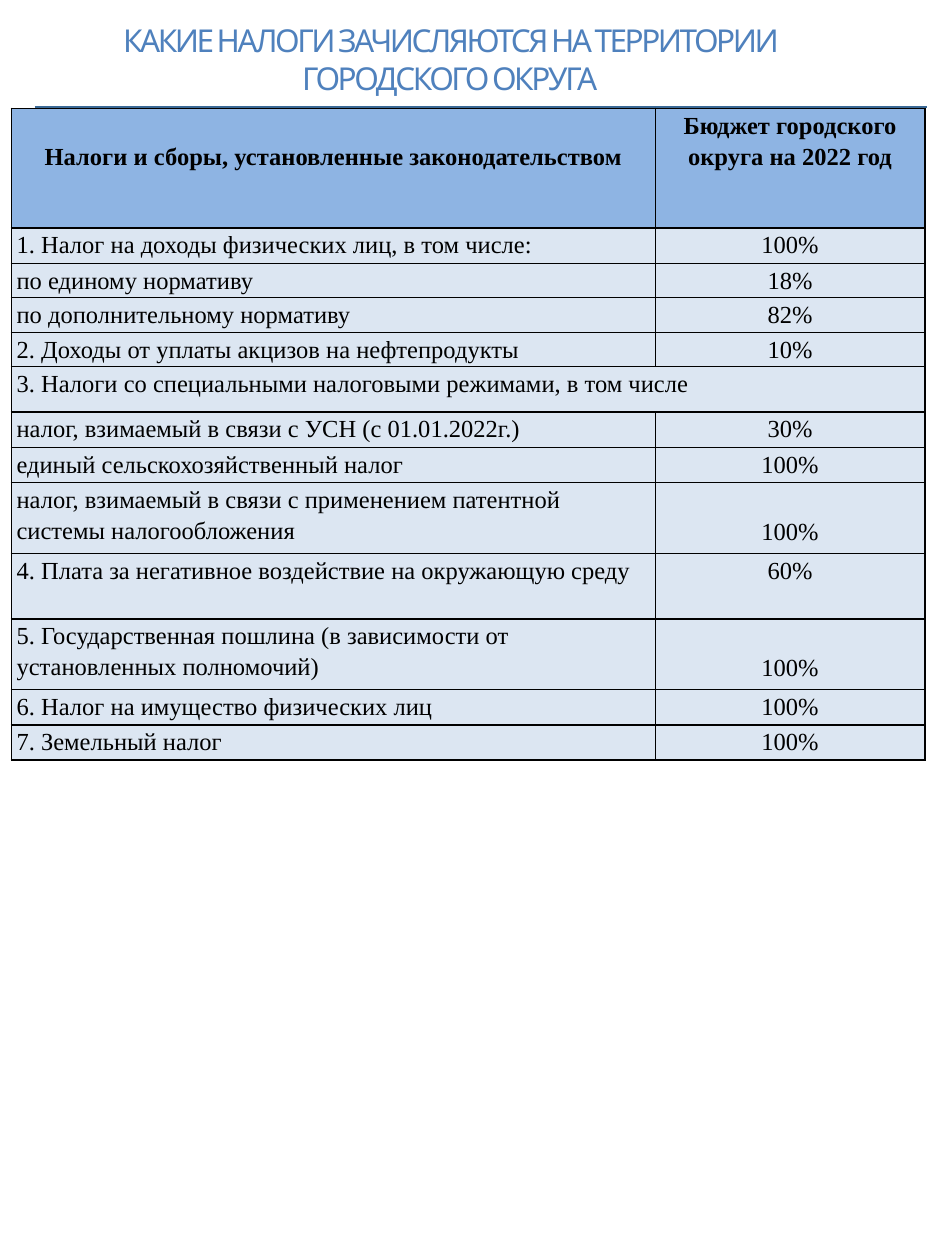
import dataclasses

import pptx
import pptx.dml.color
import pptx.enum.shapes
import pptx.enum.text
import pptx.oxml
import pptx.oxml.ns
import pptx.util

Pt = pptx.util.Pt
Align = pptx.enum.text.PP_ALIGN
rgb = pptx.dml.color.RGBColor.from_string


@dataclasses.dataclass(frozen=True)
class Theme:
    title_font: str = "Karla"
    body_font: str = "Times New Roman"
    title_size: int = 18
    body_size: int = 14
    title: str = "4F81BD"
    rule: str = "3B6996"
    text: str = "000000"
    border: str = "000000"
    header_fill: str = "8EB4E3"
    row_fill: str = "DCE6F2"


@dataclasses.dataclass(frozen=True)
class Box:
    left: float
    top: float
    width: float
    height: float

    def lengths(self):
        return [Pt(value) for value in (self.left, self.top, self.width, self.height)]


THEME = Theme()
LINE_HEIGHT = 18
TITLE = "КАКИЕ НАЛОГИ ЗАЧИСЛЯЮТСЯ НА ТЕРРИТОРИИ ГОРОДСКОГО ОКРУГА"
COLUMN_SHARES = (368, 154)
HEADER = (68.4, "Налоги и сборы, установленные законодательством",
          "Бюджет городского округа на 2022 год")
TAXES = [
    (20.2, "1. Налог на доходы физических лиц, в том числе:", "100%"),
    (19.4, "по единому нормативу", "18%"),
    (20.2, "по дополнительному нормативу", "82%"),
    (19.4, "2. Доходы от уплаты акцизов на нефтепродукты", "10%"),
    (26, "3. Налоги со специальными налоговыми режимами, в том числе", None),
    (20.2, "налог, взимаемый в связи с УСН (с 01.01.2022г.)", "30%"),
    (20.2, "единый сельскохозяйственный налог", "100%"),
    (40.4, "налог, взимаемый в связи с применением патентной системы налогообложения", "100%"),
    (37.4, "4. Плата за негативное воздействие на окружающую среду", "60%"),
    (40.4, "5. Государственная пошлина (в зависимости от\nустановленных полномочий)", "100%"),
    (20.2, "6. Налог на имущество физических лиц", "100%"),
    (20.2, "7. Земельный налог", "100%"),
]


def style_span(span, font, size, color, bold=False):
    span.font.name = font
    span.font.size = Pt(size)
    span.font.bold = bold
    span.font.color.rgb = rgb(color)


def add_title(page, box):
    shape = page.shapes.add_textbox(*box.lengths())
    frame = shape.text_frame
    frame.word_wrap = True
    frame.margin_left = frame.margin_bottom = 0
    frame.margin_top = Pt(1)
    frame.margin_right = Pt(36)
    frame.text = TITLE
    para = frame.paragraphs[0]
    para.alignment = Align.CENTER
    span = para.runs[0]
    style_span(span, THEME.title_font, THEME.title_size, THEME.title)
    span.font._element.set("spc", "-140")


def add_rule(page, box):
    rule = page.shapes.add_connector(
        pptx.enum.shapes.MSO_CONNECTOR.STRAIGHT,
        Pt(box.left), Pt(box.top), Pt(box.left + box.width), Pt(box.top))
    rule.line.color.rgb = rgb(THEME.rule)
    rule.line.width = Pt(0.75)
    rule._element.spPr.append(pptx.oxml.parse_xml(
        f'<a:effectLst {pptx.oxml.ns.nsdecls("a")}/>'))


def set_borders(cell):
    properties = cell._tc.get_or_add_tcPr()
    for position, side in enumerate(("lnL", "lnR", "lnT", "lnB")):
        properties.insert(position, pptx.oxml.parse_xml(
            f'<a:{side} {pptx.oxml.ns.nsdecls("a")} w="{Pt(1)}"><a:solidFill>'
            f'<a:srgbClr val="{THEME.border}"/></a:solidFill></a:{side}>'))


def fill_cell(cell, text, fill, alignment, bold, lines_above):
    cell.margin_left = cell.margin_right = Pt(3)
    cell.margin_top = Pt(lines_above * LINE_HEIGHT)
    cell.margin_bottom = 0
    cell.fill.solid()
    cell.fill.fore_color.rgb = rgb(fill)
    set_borders(cell)
    cell.text_frame.text = text
    for para in cell.text_frame.paragraphs:
        para.alignment = alignment
        para.line_spacing = 1.15
        for span in para.runs:
            style_span(span, THEME.body_font, THEME.body_size, THEME.text, bold)


def add_tax_table(page, box):
    rows = [HEADER] + TAXES
    table = page.shapes.add_table(len(rows), len(COLUMN_SHARES), *box.lengths()).table
    for column, share in zip(table.columns, COLUMN_SHARES):
        column.width = Pt(box.width * share / sum(COLUMN_SHARES))
    for index, (height, name, rate) in enumerate(rows):
        is_header = index == 0
        fill = THEME.header_fill if is_header else THEME.row_fill
        table.rows[index].height = Pt(height)
        name_cell, rate_cell = table.cell(index, 0), table.cell(index, 1)
        fill_cell(name_cell, name, fill, Align.CENTER if is_header else Align.LEFT,
                  is_header, int(is_header))
        fill_cell(rate_cell, rate or "", fill, Align.CENTER, is_header, int(height > 40 and not is_header))
        if rate is None:
            name_cell.merge(rate_cell)


def main():
    deck = pptx.Presentation()
    deck.slide_width, deck.slide_height = Pt(540), Pt(720)
    page = deck.slides.add_slide(deck.slide_layouts[6])
    add_title(page, Box(20, 11, 510, 73))
    add_rule(page, Box(20, 61.2, 510, 0))
    add_tax_table(page, Box(6.5, 61.9, 522, sum(row[0] for row in [HEADER] + TAXES)))
    deck.save("out.pptx")


if __name__ == "__main__":
    main()
